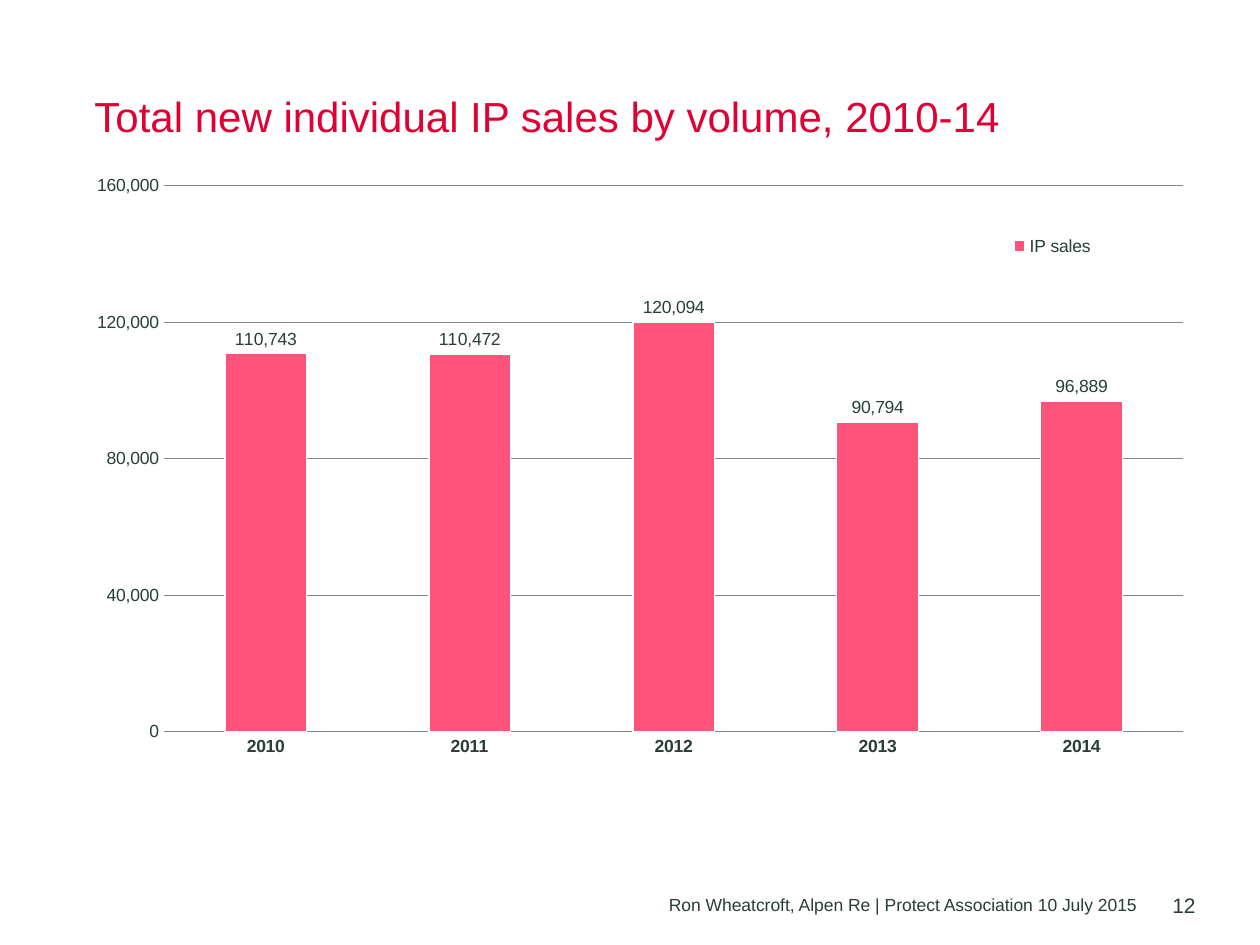
from dataclasses import dataclass

from lxml.etree import SubElement
from pptx import Presentation
from pptx.chart.data import CategoryChartData
from pptx.dml.color import RGBColor
from pptx.enum.chart import XL_CHART_TYPE as Kind
from pptx.enum.chart import XL_LABEL_POSITION as Spot
from pptx.enum.chart import XL_LEGEND_POSITION as Side
from pptx.enum.chart import XL_TICK_MARK as Tick
from pptx.enum.text import MSO_ANCHOR as Anchor
from pptx.enum.text import PP_ALIGN as Align
from pptx.oxml.ns import qn
from pptx.util import Inches, Pt

WIDE, HIGH = Inches(10), Inches(7.5)
FONT = "Arial"
RED = RGBColor(0xE0, 0x00, 0x34)
PINK = RGBColor(0xFF, 0x53, 0x7B)
GREEN = RGBColor(0x28, 0x3E, 0x36)
GREY = RGBColor(0x86, 0x86, 0x86)
WHITE = RGBColor(0xFF, 0xFF, 0xFF)

SALES = {"2010": 110743, "2011": 110472, "2012": 120094,
         "2013": 90794, "2014": 96889}


@dataclass(frozen=True)
class Box:
    """An area given in inches on the slide."""
    left: float
    top: float
    width: float
    height: float

    def place(self) -> tuple:
        return tuple(Inches(n) for n in
                     (self.left, self.top, self.width, self.height))


TITLE = Box(0.75, 0.76, 8.74, 0.76)
CHART = Box(0.75, 1.39, 8.74, 4.96)
FOOTER = Box(2.56, 7.11, 6.46, 0.15)
NUMBER = Box(9.25, 7.08, 0.24, 0.2)


def add_text(slide, box: Box, text: str, *, size: float, color=GREEN,
             align=Align.LEFT, anchor=Anchor.TOP, wrap=False,
             spacing=1.0) -> None:
    frame = slide.shapes.add_textbox(*box.place()).text_frame
    frame.margin_left = frame.margin_right = 0
    frame.margin_top = frame.margin_bottom = 0
    frame.word_wrap = wrap
    frame.vertical_anchor = anchor
    line = frame.paragraphs[0]
    line.alignment = align
    line.line_spacing = spacing
    run = line.add_run()
    run.text = text
    set_font(run.font, size, color)


def set_font(font, size: float, color=GREEN, bold=False) -> None:
    font.name = FONT
    font.size = Pt(size)
    font.bold = bold
    font.color.rgb = color


def set_line(line, color: RGBColor) -> None:
    line.color.rgb = color
    line.width = Pt(0.75)


def set_layout(part, index: int, **values) -> None:
    """Fix a chart part at shares of the chart's size."""
    for old in part.findall(qn("c:layout")):
        part.remove(old)
    layout = SubElement(part, qn("c:layout"))
    part.insert(index, layout)
    manual = SubElement(layout, qn("c:manualLayout"))
    for key, value in values.items():
        SubElement(manual, qn(f"c:{key}")).set("val", str(value))


def add_sales(slide) -> None:
    data = CategoryChartData(number_format="#,##0")
    data.categories = list(SALES)
    data.add_series("IP sales", list(SALES.values()))
    chart = slide.shapes.add_chart(
        Kind.COLUMN_CLUSTERED, *CHART.place(), data).chart
    set_font(chart.font, 10)
    chart.has_title = False

    years = chart.category_axis
    years.major_tick_mark = years.minor_tick_mark = Tick.NONE
    set_font(years.tick_labels.font, 10, bold=True)
    set_line(years.format.line, GREY)

    scale = chart.value_axis
    scale.minimum_scale, scale.maximum_scale = 0, 160000
    scale.major_unit = 40000
    scale.major_tick_mark = scale.minor_tick_mark = Tick.NONE
    scale.format.line.fill.background()
    set_line(scale.major_gridlines.format.line, GREY)
    scale.tick_labels.number_format = "#,##0"
    scale.tick_labels.number_format_is_linked = False

    plot = chart.plots[0]
    plot.gap_width = 150
    plot.vary_by_categories = False
    bars = plot.series[0]
    bars.format.fill.solid()
    bars.format.fill.fore_color.rgb = PINK
    set_line(bars.format.line, WHITE)
    labels = bars.data_labels
    labels.show_value = True
    labels.position = Spot.OUTSIDE_END
    labels.number_format = "#,##0"
    labels.number_format_is_linked = False
    set_font(labels.font, 10)

    chart.has_legend = True
    legend = chart.legend
    legend.position = Side.BOTTOM
    legend.include_in_layout = False
    set_font(legend.font, 10)

    area = chart.element.find(f".//{qn('c:plotArea')}")
    set_layout(area, 0, layoutTarget="inner", xMode="edge", yMode="edge",
               x=0.063, y=0.017, w=0.926, h=0.874)
    key = chart.element.find(f".//{qn('c:legend')}")
    set_layout(key, 1, xMode="edge", yMode="edge", x=0.83, y=0.09)


def main() -> None:
    deck = Presentation()
    deck.slide_width, deck.slide_height = WIDE, HIGH
    slide = deck.slides.add_slide(deck.slide_layouts[6])
    add_text(slide, FOOTER,
             "Ron Wheatcroft, Alpen Re | Protect Association 10 July 2015",
             size=10, align=Align.RIGHT, anchor=Anchor.BOTTOM)
    add_text(slide, TITLE, "Total new individual IP sales by volume, 2010-14",
             size=24, color=RED, wrap=True, spacing=0.9)
    add_sales(slide)
    add_text(slide, NUMBER, "12", size=12,
             align=Align.RIGHT, anchor=Anchor.BOTTOM)
    deck.save("out.pptx")


if __name__ == "__main__":
    main()
